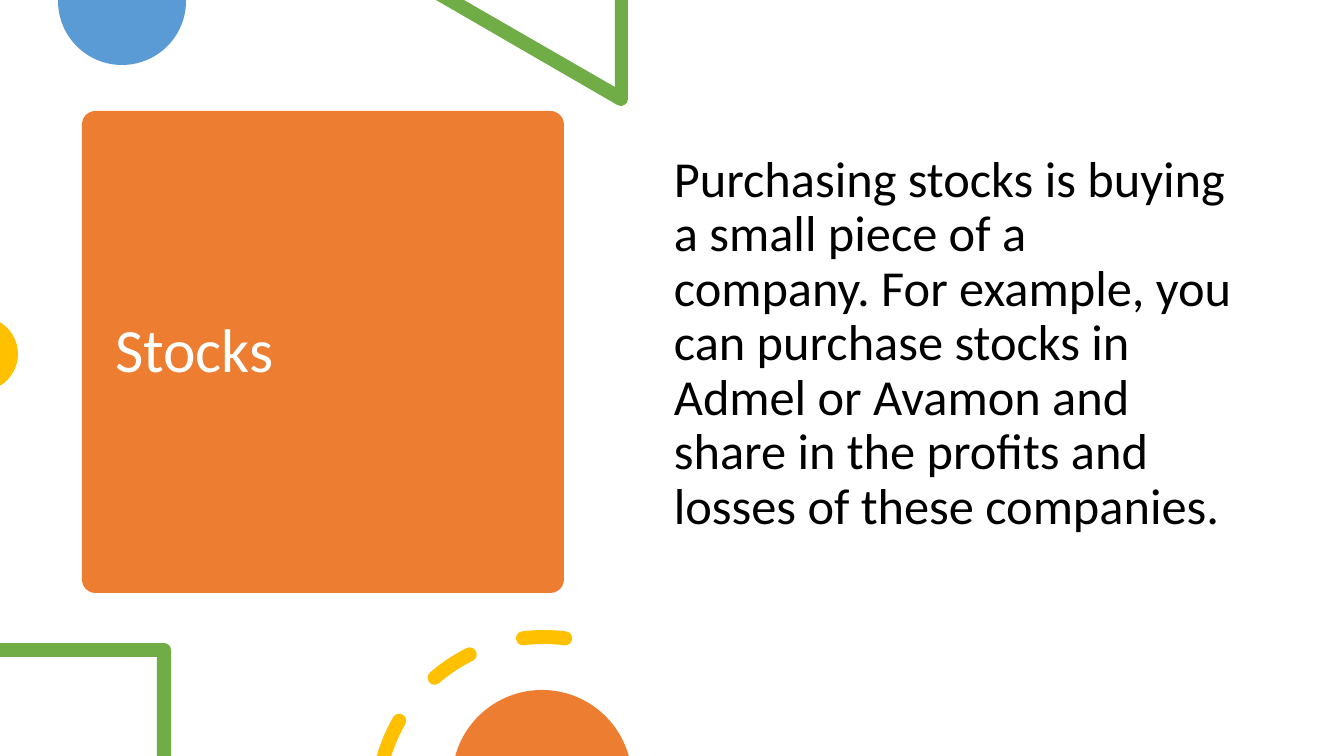
import math
from dataclasses import dataclass

from lxml import etree
from pptx import Presentation
from pptx import util as u
from pptx.dml.color import RGBColor
from pptx.enum import shapes, text
from pptx.oxml.ns import qn


@dataclass(frozen=True)
class Theme:
    orange = RGBColor.from_string("ED7D31")
    blue = RGBColor.from_string("5B9BD5")
    green = RGBColor.from_string("70AD47")
    yellow = RGBColor.from_string("FFC000")
    white = RGBColor.from_string("FFFFFF")
    black = RGBColor.from_string("000000")
    font = "Calibri"
    title_size = u.Pt(44)
    body_size = u.Pt(36)


theme = Theme()
WIDTH, HEIGHT = 1344, 756
PX = u.Inches(7.5) / HEIGHT
FINE = 100  # outline units in one px

presentation = Presentation()
presentation.slide_width = u.Emu(round(WIDTH * PX))
presentation.slide_height = u.Emu(round(HEIGHT * PX))
slide = presentation.slides.add_slide(presentation.slide_layouts[5])


def arc(x, y, radius, start, end):
    """Start point and Bézier curves of a circular arc, in degrees clockwise from the right."""
    count = math.ceil(abs(end - start) / 90)
    step = math.radians(end - start) / count
    reach = 4 / 3 * math.tan(step / 4)
    segments = []
    for i in range(count):
        a = math.radians(start) + i * step
        b = a + step
        (ca, sa), (cb, sb) = ((math.cos(t), math.sin(t)) for t in (a, b))
        if i == 0:
            segments.append((x + radius * ca, y + radius * sa))
        segments.append((x + radius * (ca - reach * sa), y + radius * (sa + reach * ca),
                         x + radius * (cb + reach * sb), y + radius * (sb - reach * cb),
                         x + radius * cb, y + radius * sb))
    return segments


def add_outline(color, *contours):
    """Add a filled freeform; two numbers make a line, six make a Bézier curve."""
    builder = None
    for contour in contours:
        points = [(s[i] * FINE, s[i + 1] * FINE) for s in contour for i in range(0, len(s), 2)]
        if builder is None:
            builder = slide.shapes.build_freeform(*points[0], scale=PX / FINE)
        else:
            builder.move_to(*points[0])
        builder.add_line_segments(points[1:])
    shape = builder.convert_to_shape()
    lines = iter(list(shape.element.iter(qn("a:lnTo"))))
    for segment in (s for contour in contours for s in contour[1:]):
        line = next(lines)
        if len(segment) == 6:
            curve = etree.Element(qn("a:cubicBezTo"))
            line.addprevious(curve)
            for control in (line, next(lines), next(lines)):
                curve.append(control[0])
                control.getparent().remove(control)
    shape.shadow.inherit = False
    shape.fill.solid()
    shape.fill.fore_color.rgb = color
    shape.line.fill.background()


# Title card
left, top, side = 82, 111, 482
card = slide.shapes.add_shape(shapes.MSO_SHAPE.ROUNDED_RECTANGLE,
                              *(round(v * PX) for v in (left, top, side, side)))
card.adjustments[0] = 0.028
card.shadow.inherit = False
card.fill.solid()
card.fill.fore_color.rgb = theme.orange
card.line.fill.background()

title = slide.shapes.title
title.element.addprevious(card.element)

# Corner decorations
add_outline(theme.blue, [(186, 0), *arc(122, 1, 64, 0, 180), (58, 0)])
add_outline(theme.green, [(628, 0), (615, 0), (615, 87), (464, 0), (436, 0),
                          *arc(621, 99, 7, 120, 0)])
add_outline(theme.yellow, arc(-19, 354, 37, -59, 59))

# Title and body text
body = slide.shapes.add_textbox(0, 0, 0, 0)
for shape, box, words, size, color, anchor, space in (
    (title, (105, 123, 434, 460), "Stocks",
     theme.title_size, theme.white, text.MSO_ANCHOR.MIDDLE, 0),
    (body, (664, 149, 584, 310),
     "Purchasing stocks is buying a small piece of a\vcompany. For example, you can "
     "purchase stocks in Admel or Avamon and\vshare in the profits and losses of "
     "these companies.",
     theme.body_size, theme.black, text.MSO_ANCHOR.TOP, 10),
):
    shape.left, shape.top, shape.width, shape.height = (round(v * PX) for v in box)
    frame = shape.text_frame
    frame.text = words
    frame.word_wrap = True
    frame.auto_size = text.MSO_AUTO_SIZE.NONE
    frame.vertical_anchor = anchor
    paragraph = frame.paragraphs[0]
    paragraph.alignment = text.PP_ALIGN.LEFT
    paragraph.line_spacing = 0.9
    paragraph.space_before = u.Pt(space)
    paragraph.font.name = theme.font
    paragraph.font.size = size
    paragraph.font.color.rgb = color

add_outline(theme.green, [(0, 643), (0, 657), (157, 657), (157, 756), (171, 756),
                          *arc(164, 650, 7, 0, -90)])

# Dashed ring with round ends; the first dash is cut by the lower edge
ring_x, ring_y, ring_radius, half_width = 544, 804, 167, 7
dash_length, dash_pitch = 14.5, 33.7
outer, inner = ring_radius + half_width, ring_radius - half_width
outer_cut, inner_cut = (180 + math.degrees(math.asin((ring_y - HEIGHT) / r))
                        for r in (outer, inner))
dashes = []
for i in range(3):
    start = 195.4 + i * dash_pitch
    end = start + dash_length
    start_cap, end_cap = (
        (ring_x + ring_radius * math.cos(math.radians(a)),
         ring_y + ring_radius * math.sin(math.radians(a))) for a in (start, end))
    dash = (arc(ring_x, ring_y, outer, max(start, outer_cut), end)
            + arc(*end_cap, half_width, end, end + 180)
            + arc(ring_x, ring_y, inner, end, max(start, inner_cut)))
    if i > 0:
        dash += arc(*start_cap, half_width, start + 180, start + 360)
    dashes.append(dash)
add_outline(theme.yellow, *dashes)
add_outline(theme.orange, arc(542, 780, 90, 195.5, 344.5))

presentation.save("out.pptx")
